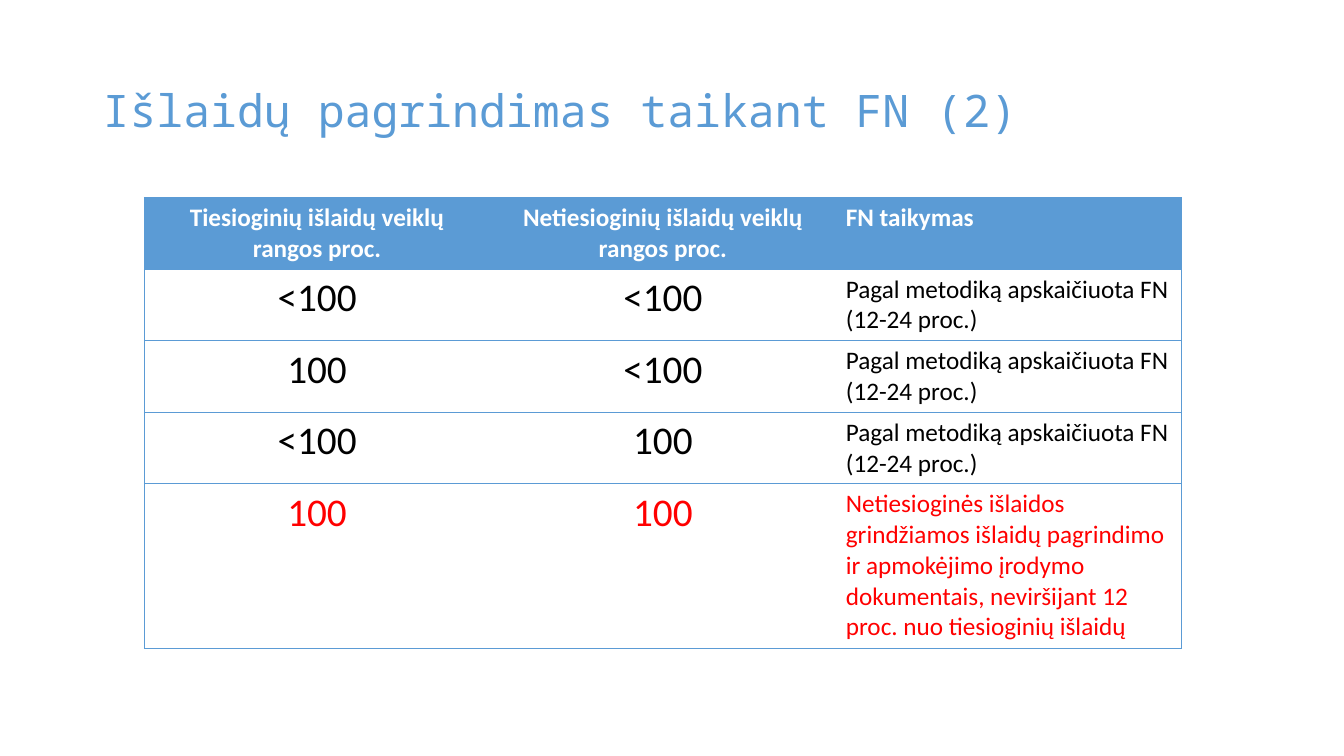
from dataclasses import dataclass

from lxml.etree import SubElement
from pptx import Presentation
from pptx.dml.color import RGBColor
from pptx.enum.text import MSO_ANCHOR, PP_ALIGN
from pptx.oxml import parse_xml
from pptx.oxml.ns import nsdecls, qn
from pptx.util import Inches, Pt


@dataclass(frozen=True)
class Theme:
    blue: str = "5B9BD5"
    white: str = "FFFFFF"
    black: str = "000000"
    red: str = "FF0000"
    mono: str = "Noto Sans Mono"
    sans: str = "Calibri"
    title: int = 32
    value: int = 28
    body: int = 18
    rule: float = 0.5


THEME = Theme()
METHOD = "Pagal metodiką apskaičiuota FN (12-24 proc.)"
LIMIT = ("Netiesioginės išlaidos grindžiamos išlaidų pagrindimo ir apmokėjimo "
         "įrodymo dokumentais, neviršijant 12 proc. nuo tiesioginių išlaidų")
ROWS = [
    ("Tiesioginių išlaidų veiklų rangos proc.",
     "Netiesioginių išlaidų veiklų rangos proc.", "FN taikymas"),
    ("<100", "<100", METHOD),
    ("100", "<100", METHOD),
    ("<100", "100", METHOD),
    ("100", "100", LIMIT),
]


def write(frame, text, size=THEME.body, color=THEME.black, font=THEME.sans,
          bold=False, align=PP_ALIGN.LEFT, space=None):
    frame.word_wrap = True
    para = frame.paragraphs[0]
    para.alignment = align
    para.line_spacing = space
    run = para.add_run()
    run.text = text
    run.font.name = font
    run.font.size = Pt(size)
    run.font.bold = bold
    run.font.color.rgb = RGBColor.from_string(color)


def edge(cell, drawn):
    """Rule the named sides of a cell and clear the others."""
    props = cell._tc.get_or_add_tcPr()
    for spot, side in enumerate("LRTB"):
        line = parse_xml(f'<a:ln{side} {nsdecls("a")} w="{Pt(THEME.rule)}"/>')
        if side in drawn:
            fill = SubElement(line, qn("a:solidFill"))
            SubElement(fill, qn("a:srgbClr")).set("val", THEME.blue)
        else:
            SubElement(line, qn("a:noFill"))
        props.insert(spot, line)


def add_title(slide, left, top, width, height):
    box = slide.shapes.add_textbox(*map(Inches, (left, top, width, height)))
    box.text_frame.vertical_anchor = MSO_ANCHOR.MIDDLE
    write(box.text_frame, "Išlaidų pagrindimas taikant FN (2)", size=THEME.title,
          color=THEME.blue, font=THEME.mono, space=0.9)


def add_rates(slide, left, top, width, height):
    count, last = len(ROWS[0]), len(ROWS) - 1
    short = 0.71
    frame = slide.shapes.add_table(len(ROWS), count,
                                   *map(Inches, (left, top, width, height)))
    table = frame.table
    table.horz_banding = False
    for col in table.columns:
        col.width = Inches(width / count)

    for r, texts in enumerate(ROWS):
        # The last row takes the height left by the short rows
        table.rows[r].height = Inches(height - short * last if r == last else short)
        head = r == 0
        color = THEME.white if head else THEME.red if r == last else THEME.black
        for c, text in enumerate(texts):
            cell = table.cell(r, c)
            note = c == count - 1
            if head:
                cell.fill.solid()
                cell.fill.fore_color.rgb = RGBColor.from_string(THEME.blue)
            else:
                cell.fill.background()
            edge(cell, "TB" + ("L" if c == 0 else "") + ("R" if note else ""))
            write(cell.text_frame, text, color=color, bold=head,
                  size=THEME.body if head or note else THEME.value,
                  align=PP_ALIGN.LEFT if note else PP_ALIGN.CENTER)


def main():
    deck = Presentation()
    deck.slide_width, deck.slide_height = Inches(13.33), Inches(7.5)
    slide = deck.slides.add_slide(deck.slide_layouts[6])
    # Heading above, table of rates below
    add_title(slide, 0.92, 0.4, 11.5, 1.45)
    add_rates(slide, 1.43, 1.96, 10.29, 4.47)
    deck.save("out.pptx")


if __name__ == "__main__":
    main()
